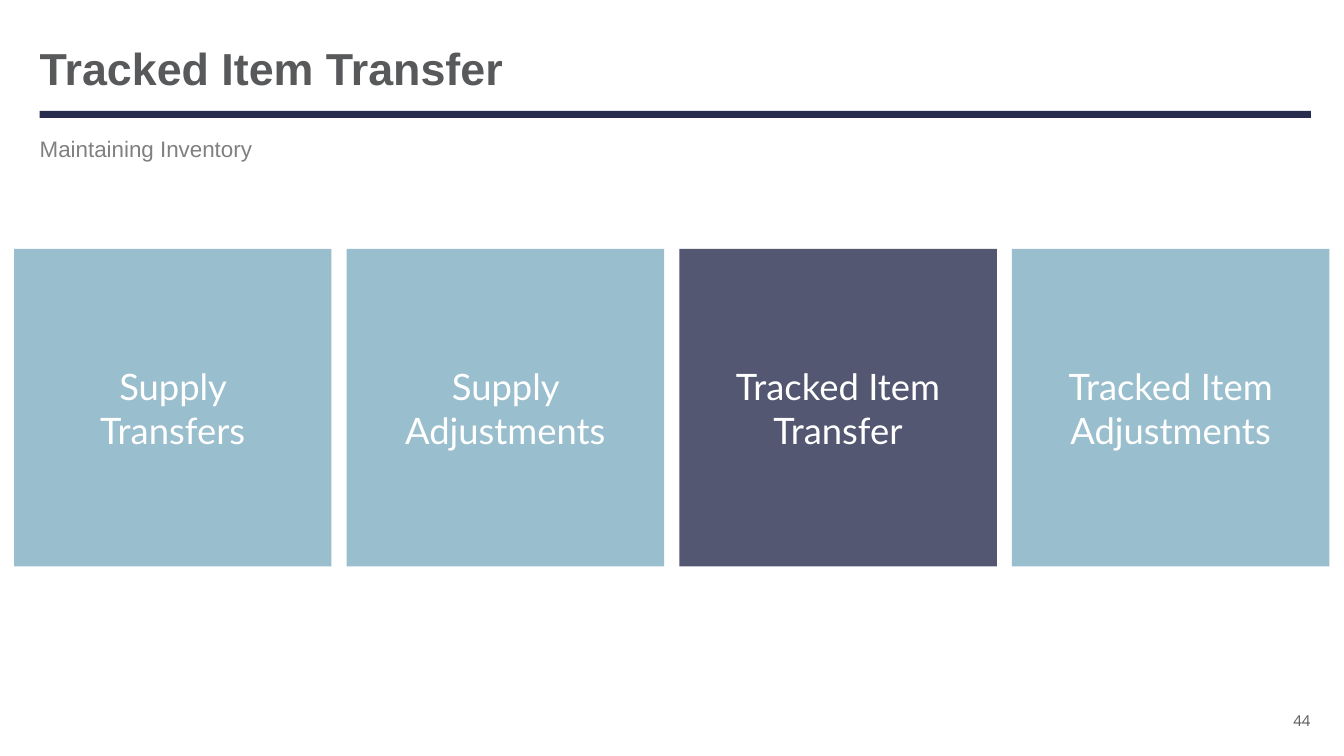
from lxml.etree import SubElement
from pptx import Presentation
from pptx.dml.color import RGBColor
from pptx.enum.shapes import MSO_SHAPE
from pptx.enum.text import MSO_ANCHOR, PP_ALIGN
from pptx.oxml.ns import qn
from pptx.util import Pt

NAVY, TEAL, WHITE = "282D4E", "005D83", "FFFFFF"
DARK, GRAY = "58595B", "808080"
LEFT, WIDTH = 28.4, 908
SIDE, PITCH = 226.8, 237.6
TILES = ["Supply Transfers", "Supply Adjustments",
         "Tracked Item Transfer", "Tracked Item Adjustments"]
CURRENT = "Tracked Item Transfer"


def color(code):
    return RGBColor.from_string(code)


def write(shape, text, size, font, ink, bold=False, align=PP_ALIGN.LEFT,
          anchor=MSO_ANCHOR.MIDDLE, inset=(0, 0), before=0, spacing=1.0):
    """Fill a shape with one paragraph; inset is (sides, top and bottom)."""
    frame = shape.text_frame
    frame.word_wrap = True
    frame.vertical_anchor = anchor
    frame.margin_left = frame.margin_right = Pt(inset[0])
    frame.margin_top = frame.margin_bottom = Pt(inset[1])
    para = frame.paragraphs[0]
    para.alignment = align
    para.space_before = Pt(before)
    para.line_spacing = spacing
    run = para.add_run()
    run.text = text
    run.font.size = Pt(size)
    run.font.name = font
    run.font.bold = bold
    run.font.color.rgb = color(ink)


def add_text(slide, box, text, **style):
    write(slide.shapes.add_textbox(*map(Pt, box)), text, **style)


def add_rect(slide, box, fill, alpha=100):
    """Add a plain rectangle; alpha is its opacity in percent."""
    rect = slide.shapes.add_shape(MSO_SHAPE.RECTANGLE, *map(Pt, box))
    rect.shadow.inherit = False
    rect.line.fill.background()
    rect.fill.solid()
    rect.fill.fore_color.rgb = color(fill)
    if alpha < 100:
        tint = rect.fill._xPr.find(qn("a:solidFill"))[0]
        SubElement(tint, qn("a:alpha"), val=str(alpha * 1000))
    return rect


def add_tile(slide, left, text):
    fill, alpha = (NAVY, 80) if text == CURRENT else (TEAL, 40)
    tile = add_rect(slide, (left, 177.8, SIDE, SIDE), fill, alpha)
    write(tile, text, size=26, font="Lato", ink=WHITE,
          align=PP_ALIGN.CENTER, inset=(23, 23))


def main():
    deck = Presentation()
    deck.slide_width, deck.slide_height = Pt(960), Pt(540)
    slide = deck.slides.add_slide(deck.slide_layouts[6])

    add_rect(slide, (LEFT, 79.2, WIDTH, 5), NAVY)
    add_text(slide, (LEFT, 29.5, WIDTH, 44), CURRENT, size=32, font="Arial",
             ink=DARK, bold=True, inset=(0, 3.6), spacing=0.85)
    add_text(slide, (LEFT, 92.9, WIDTH, 51), "Maintaining Inventory", size=16,
             font="Arial", ink=GRAY, anchor=MSO_ANCHOR.TOP, inset=(0, 3.6),
             before=2.7)
    add_text(slide, (900, 498.2, 36, 33), "44", size=10.7, font="Open Sans",
             ink=DARK, align=PP_ALIGN.RIGHT)
    for i, text in enumerate(TILES):
        add_tile(slide, 10 + i * PITCH, text)

    deck.save("out.pptx")


if __name__ == "__main__":
    main()
